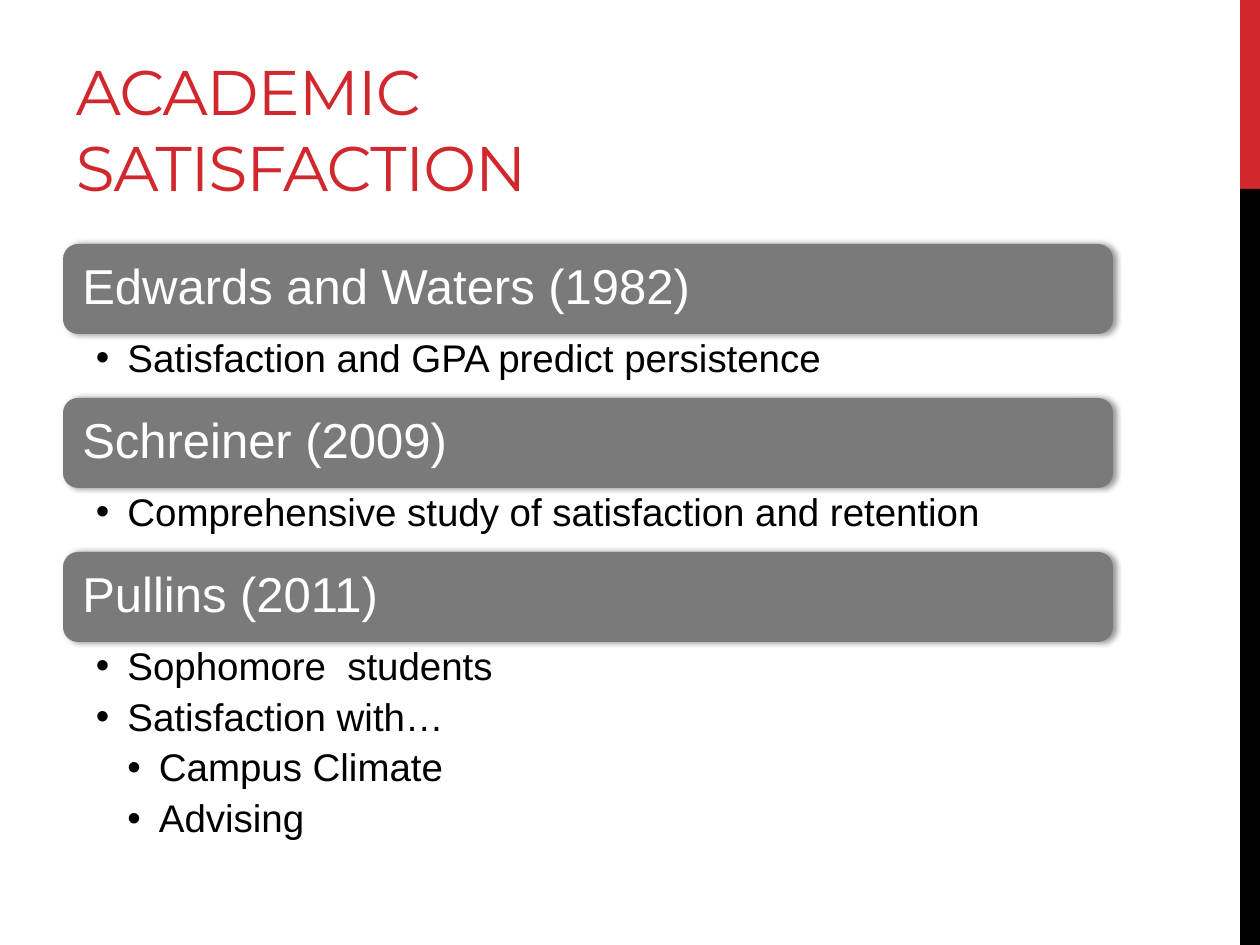
from dataclasses import dataclass

from lxml import etree
from pptx import Presentation
from pptx import util as u
from pptx.dml.color import RGBColor
from pptx.enum import shapes, text
from pptx.oxml import ns


@dataclass(frozen=True)
class Theme:
    red: str = "D1282E"
    black: str = "000000"
    gray: str = "7A7A7A"
    white: str = "FFFFFF"
    title_font: str = "Montserrat"
    body_font: str = "Arial"
    title_size: int = 36
    head_size: int = 28
    body_size: int = 22


T = Theme()
W, H = 1260, 945
HEAD_H, LINE_H = 90, 64
STUDIES = [
    ("Edwards and Waters (1982)", [(1, "Satisfaction and GPA predict persistence")], LINE_H),
    ("Schreiner (2009)", [(1, "Comprehensive study of satisfaction and retention")], LINE_H),
    ("Pullins (2011)", [(1, "Sophomore  students"), (1, "Satisfaction with…"),
                        (2, "Campus Climate"), (2, "Advising")], 199),
]


def px(n):
    return u.Emu(round(n * 914400 / 126))


def apply(obj, **fmt):
    for name, value in fmt.items():
        setattr(obj, name, value)


def add_block(s, kind, box, color):
    sp = s.shapes.add_shape(kind, *map(px, box))
    sp.shadow.inherit = False
    sp.fill.solid()
    sp.fill.fore_color.rgb = RGBColor.from_string(color)
    sp.line.fill.background()
    return sp


def set_frame(tf, anchor, left, top, right, bottom):
    apply(tf, word_wrap=True, auto_size=text.MSO_AUTO_SIZE.NONE, vertical_anchor=anchor,
          margin_left=px(left), margin_top=px(top),
          margin_right=px(right), margin_bottom=px(bottom))


def set_font(p, font, size, color):
    for r in p.runs:
        apply(r.font, name=font, size=u.Pt(size))
        r.font.color.rgb = RGBColor.from_string(color)


def add_shadow(sp):
    effects = sp._element.spPr.find(ns.qn("a:effectLst"))
    shadow = etree.SubElement(effects, ns.qn("a:outerShdw"), blurRad=str(u.Pt(3.1)),
                              dist=str(u.Pt(1.8)), dir="0", rotWithShape="0")
    color = etree.SubElement(shadow, ns.qn("a:srgbClr"), val=T.black)
    etree.SubElement(color, ns.qn("a:alpha"), val="40000")


def add_bullet(p, level):
    pPr = p._p.get_or_add_pPr()
    indent = u.Inches(0.25)
    pPr.set("marL", str(indent * level))
    pPr.set("indent", str(-indent))
    etree.SubElement(pPr, ns.qn("a:buFont"), typeface=T.body_font)
    etree.SubElement(pPr, ns.qn("a:buChar"), char="•")


def side_bar(s, x, y, w, h):
    red_h = h // 5
    rect = shapes.MSO_SHAPE.RECTANGLE
    add_block(s, rect, (x, y, w, red_h), T.red)
    add_block(s, rect, (x, y + red_h, w, h - red_h), T.black)


def title(s, x, y, w, h):
    tf = s.shapes.add_textbox(*map(px, (x, y, w, h))).text_frame
    set_frame(tf, text.MSO_ANCHOR.BOTTOM, 13, 6, 13, 6)
    p = tf.paragraphs[0]
    p.text = "ACADEMIC\vSATISFACTION"
    set_font(p, T.title_font, T.title_size, T.red)
    for r in p.runs:
        r._r.get_or_add_rPr().set("spc", "-60")


def study_head(s, x, y, w, h, name):
    sp = add_block(s, shapes.MSO_SHAPE.ROUNDED_RECTANGLE, (x, y, w, h), T.gray)
    add_shadow(sp)
    set_frame(sp.text_frame, text.MSO_ANCHOR.MIDDLE, 15, 15, 15, 15)
    p = sp.text_frame.paragraphs[0]
    p.text = name
    apply(p, alignment=text.PP_ALIGN.LEFT, line_spacing=0.9)
    set_font(p, T.body_font, T.head_size, T.white)


def study_points(s, x, y, w, h, points):
    tf = s.shapes.add_textbox(*map(px, (x, y, w, h))).text_frame
    set_frame(tf, text.MSO_ANCHOR.TOP, 33, 5, 28, 5)
    for i, (level, point) in enumerate(points):
        p = tf.add_paragraph() if i else tf.paragraphs[0]
        p.text = point
        apply(p, level=level, line_spacing=0.9, space_after=u.Pt(5.3))
        add_bullet(p, level)
        set_font(p, T.body_font, T.body_size, T.black)


def studies(s, x, y, w):
    for name, points, points_h in STUDIES:
        study_head(s, x, y, w, HEAD_H, name)
        study_points(s, x, y + HEAD_H, w, points_h, points)
        y += HEAD_H + points_h


def main():
    prs = Presentation()
    apply(prs, slide_width=px(W), slide_height=px(H))
    s = prs.slides.add_slide(prs.slide_layouts[6])
    side_bar(s, 1240, 0, 20, H)
    title(s, 63, 21, 798, 189)
    studies(s, 63, 244, 1050)
    prs.save("out.pptx")


if __name__ == "__main__":
    main()
